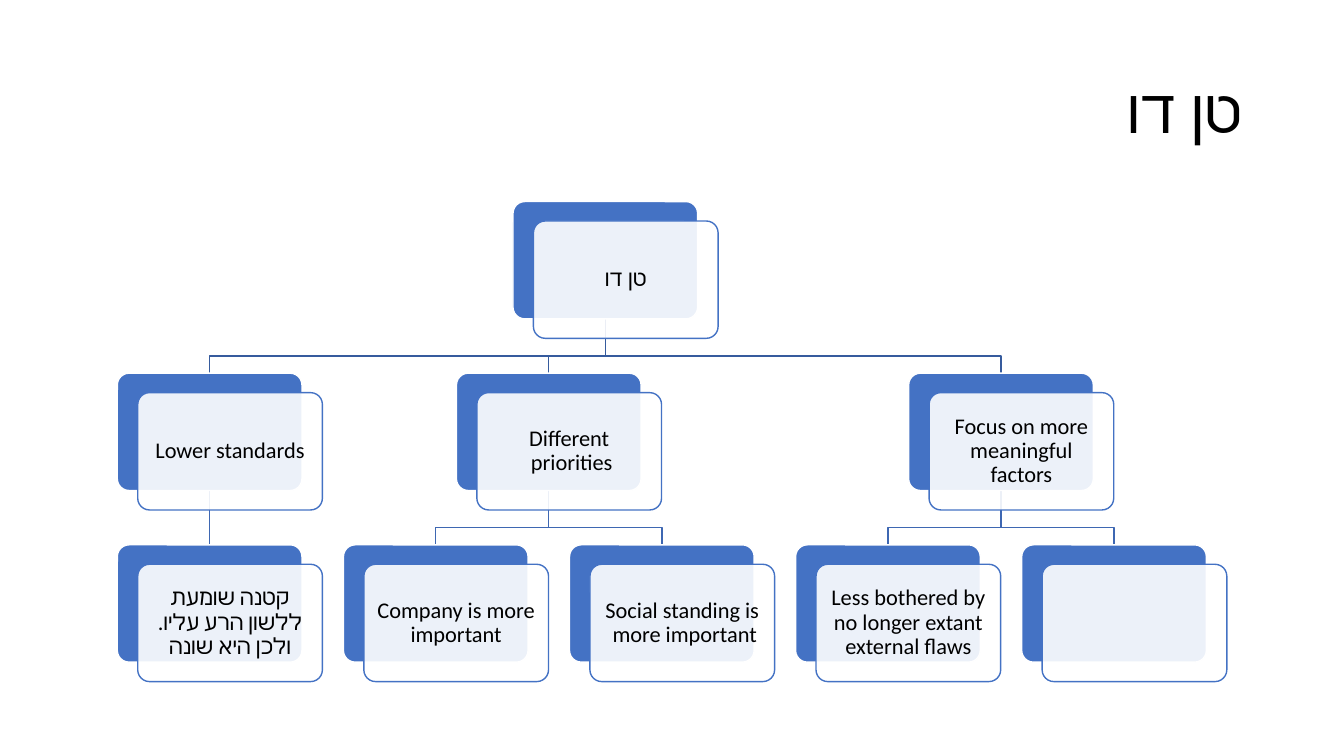
from lxml import etree
from pptx import Presentation
from pptx.dml.color import RGBColor
from pptx.enum.shapes import MSO_CONNECTOR as Connector, MSO_SHAPE as Shape
from pptx.enum.text import MSO_ANCHOR as Anchor, PP_ALIGN as Align
from pptx.oxml.ns import qn
from pptx.util import Pt


def color(value):
    return RGBColor.from_string(value)


def write(box, text, size=16, align=Align.CENTER, font="Calibri", fill="000000"):
    frame = box.text_frame
    frame.word_wrap = True
    frame.vertical_anchor = Anchor.MIDDLE
    frame.margin_left = frame.margin_right = Pt(7.2)
    para = frame.paragraphs[0]
    para.alignment = align
    para.line_spacing = 0.9
    para._p.get_or_add_pPr().set("rtl", "1")
    span = para.add_run()
    span.text = text
    span.font.name = font
    span.font.size = Pt(size)
    span.font.color.rgb = color(fill)
    etree.SubElement(span._r.get_or_add_rPr(), qn("a:cs"), typeface=font)


deck = Presentation()
deck.slide_width, deck.slide_height = Pt(960), Pt(540)
slide = deck.slides.add_slide(deck.slide_layouts[6])
shapes = slide.shapes

title = shapes.add_textbox(Pt(66), Pt(28.75), Pt(828), Pt(104.4))
write(title, "טן דו", size=44, align=Align.RIGHT)

LEFT, TOP = 83.8, 144
COLUMN_STEP, ROW_STEP = 161.5, 122.6
CARD_WIDTH, CARD_HEIGHT = 131.9, 83.8
OFFSET_X, OFFSET_Y = 14.6, 13.9
BEND_GAP = 12.3
LINK_COLORS = ["365B9D", "3E67B2"]

nodes = [
    ("root", None, 0, 1.75, "טן דו"),
    ("standards", "root", 1, 0, "Lower standards"),
    ("hearing", "standards", 2, 0, "קטנה שומעת ללשון הרע עליו. ולכן היא שונה"),
    ("priorities", "root", 1, 1.5, "Different priorities "),
    ("company", "priorities", 2, 1, "Company is more important"),
    ("social", "priorities", 2, 2, "Social standing is more important "),
    ("focus", "root", 1, 3.5, "Focus on more meaningful factors"),
    ("flaws", "focus", 2, 3, "Less bothered by no longer extant external flaws"),
    ("open", "focus", 2, 4, ""),
]

cards = {}
for name, parent, row, column, text in nodes:
    x = LEFT + column * COLUMN_STEP
    y = TOP + row * ROW_STEP
    for shift, fill, line in ((0, "4472C4", "FFFFFF"), (1, "FFFFFF", "4472C4")):
        card = shapes.add_shape(Shape.ROUNDED_RECTANGLE, Pt(x + shift * OFFSET_X),
                                Pt(y + shift * OFFSET_Y), Pt(CARD_WIDTH), Pt(CARD_HEIGHT))
        card.shadow.inherit = False
        card.adjustments[0] = 0.1
        card.fill.solid()
        card.fill.fore_color.rgb = color(fill)
        card.line.color.rgb = color(line)
        card.line.width = Pt(1)
        if shift:
            tint = card.fill._xPr.find(qn("a:solidFill"))[0]
            etree.SubElement(tint, qn("a:alpha"), val="90000")
            if text:
                write(card, text)
        else:
            cards[name] = card

for name, parent, row, column, text in nodes[1:]:
    start, end = cards[parent], cards[name]
    start_x = start.left + start.width // 2
    start_y = start.top + start.height
    end_x = end.left + end.width // 2
    bend_y = end.top - Pt(BEND_GAP)
    if start_x == end_x:
        link = shapes.add_connector(Connector.STRAIGHT, start_x, start_y, end_x, end.top)
        link.begin_connect(start, 2)
        link.end_connect(end, 0)
    else:
        outline = shapes.build_freeform(start_x, start_y)
        outline.add_line_segments([(start_x, bend_y), (end_x, bend_y), (end_x, end.top)], close=False)
        link = outline.convert_to_shape()
        link.fill.background()
    link.line.color.rgb = color(LINK_COLORS[row - 1])
    link.line.width = Pt(1)
    etree.SubElement(link._element.spPr, qn("a:effectLst"))
    shapes._spTree.insert(2, link._element)

deck.save("out.pptx")
